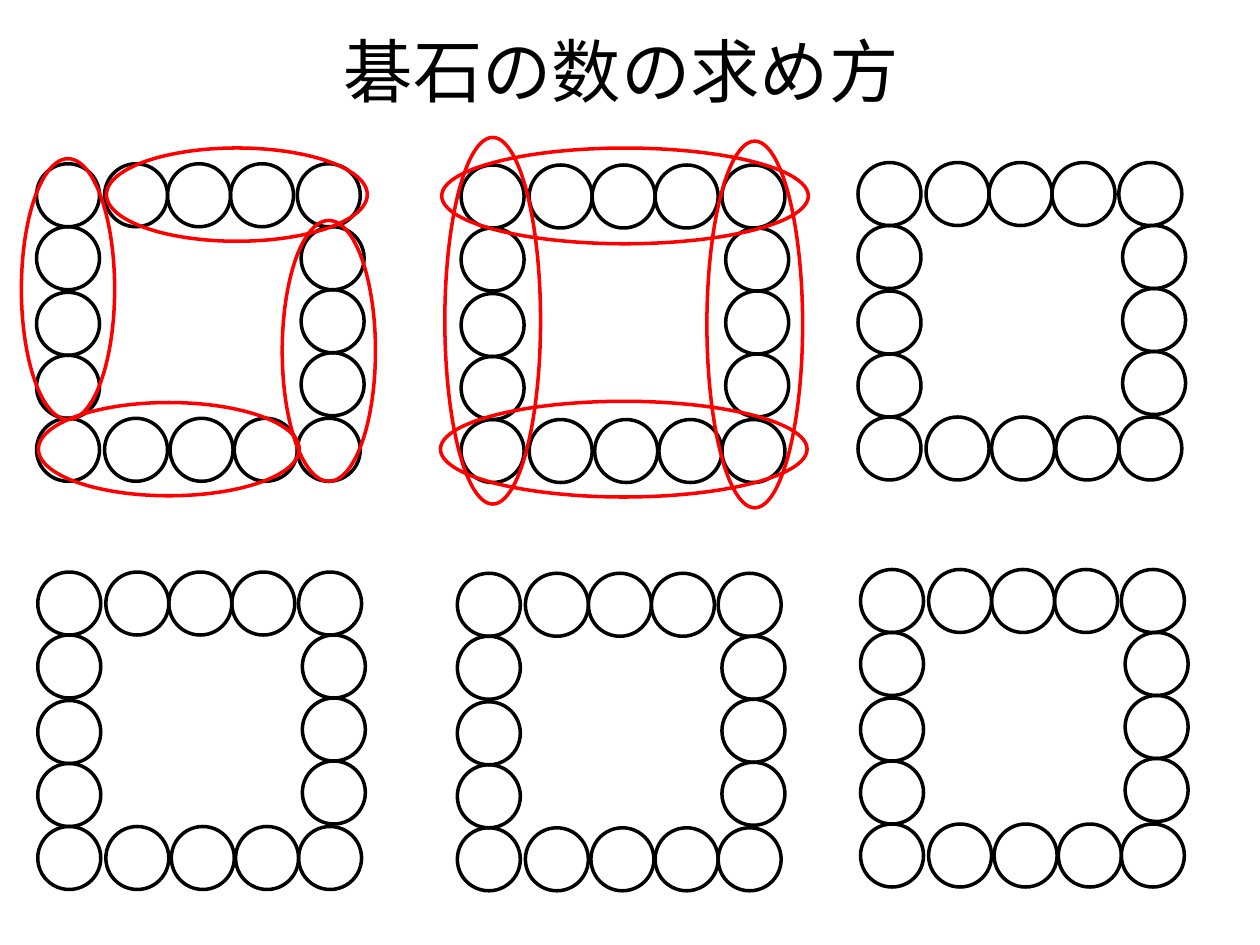
from pptx import Presentation
from pptx.dml.color import RGBColor
from pptx.enum.shapes import MSO_SHAPE
from pptx.enum.text import MSO_ANCHOR, PP_ALIGN
from pptx.util import Inches, Pt

THEME = {
    "font": "Calibri",
    "title_size": Pt(39.6),
    "ink": RGBColor(0x00, 0x00, 0x00),
    "ring": RGBColor(0xFF, 0x00, 0x00),
    "line": Pt(2),
}


def add_outline(shapes, kind, left, top, width, height, color, rotation=0):
    s = shapes.add_shape(kind, Inches(left), Inches(top), Inches(width), Inches(height))
    s.rotation = rotation
    s.shadow.inherit = False
    s.fill.background()
    s.line.color.rgb = color
    s.line.width = THEME["line"]


prs = Presentation()
prs.slide_width, prs.slide_height = Inches(10), Inches(7.5)
slide = prs.slides.add_slide(prs.slide_layouts[5])

# Title
title = slide.shapes.title
title.left, title.top = Inches(0.43), Inches(0.21)
title.width, title.height = Inches(9), Inches(0.69)
tf = title.text_frame
tf.text = "碁石の数の求め方"
tf.vertical_anchor = MSO_ANCHOR.MIDDLE
p = tf.paragraphs[0]
p.alignment = PP_ALIGN.CENTER
p.font.name = THEME["font"]
p.font.size = THEME["title_size"]
p.font.color.rgb = THEME["ink"]

# Squares of 16 stones, as offsets from the top left stone
STONE = 0.5
top_row = [(x, 0) for x in (0.54, 1.04, 1.54, 2.07)]
left_column = [(0, y) for y in (0.5, 1.02, 1.52, 2.02)]
bottom_row = [(x, 2.02) for x in (0.54, 1.06, 1.57, 2.07)]
right_column = [(2.1, y) for y in (0.5, 1, 1.5)]
stones = top_row + left_column + bottom_row + right_column + [(0, 0)]

squares = [(0.29, 1.3), (3.66, 1.31), (6.81, 1.29),
           (0.3, 4.54), (3.63, 4.55), (6.83, 4.52)]
for left, top in squares:
    group = slide.shapes.add_group_shape()
    for dx, dy in stones:
        add_outline(group.shapes, MSO_SHAPE.FLOWCHART_CONNECTOR,
                    left + dx, top + dy, STONE, STONE, THEME["ink"])

# Red rings: four stones each on the first square, five on the second
ring_sets = [
    (0.74, 2.07, [(0.17, 1.26, 0), (1.51, 0.51, 90), (2.24, 1.75, 0), (0.97, 2.53, 90)]),
    (0.76, 2.91, [(4.58, 0.1, 90), (3.53, 1.09, 180), (4.57, 2.11, 90), (5.61, 1.12, 180)]),
]
for width, height, rings in ring_sets:
    for left, top, rotation in rings:
        add_outline(slide.shapes, MSO_SHAPE.OVAL, left, top, width, height,
                    THEME["ring"], rotation)

prs.save("out.pptx")
